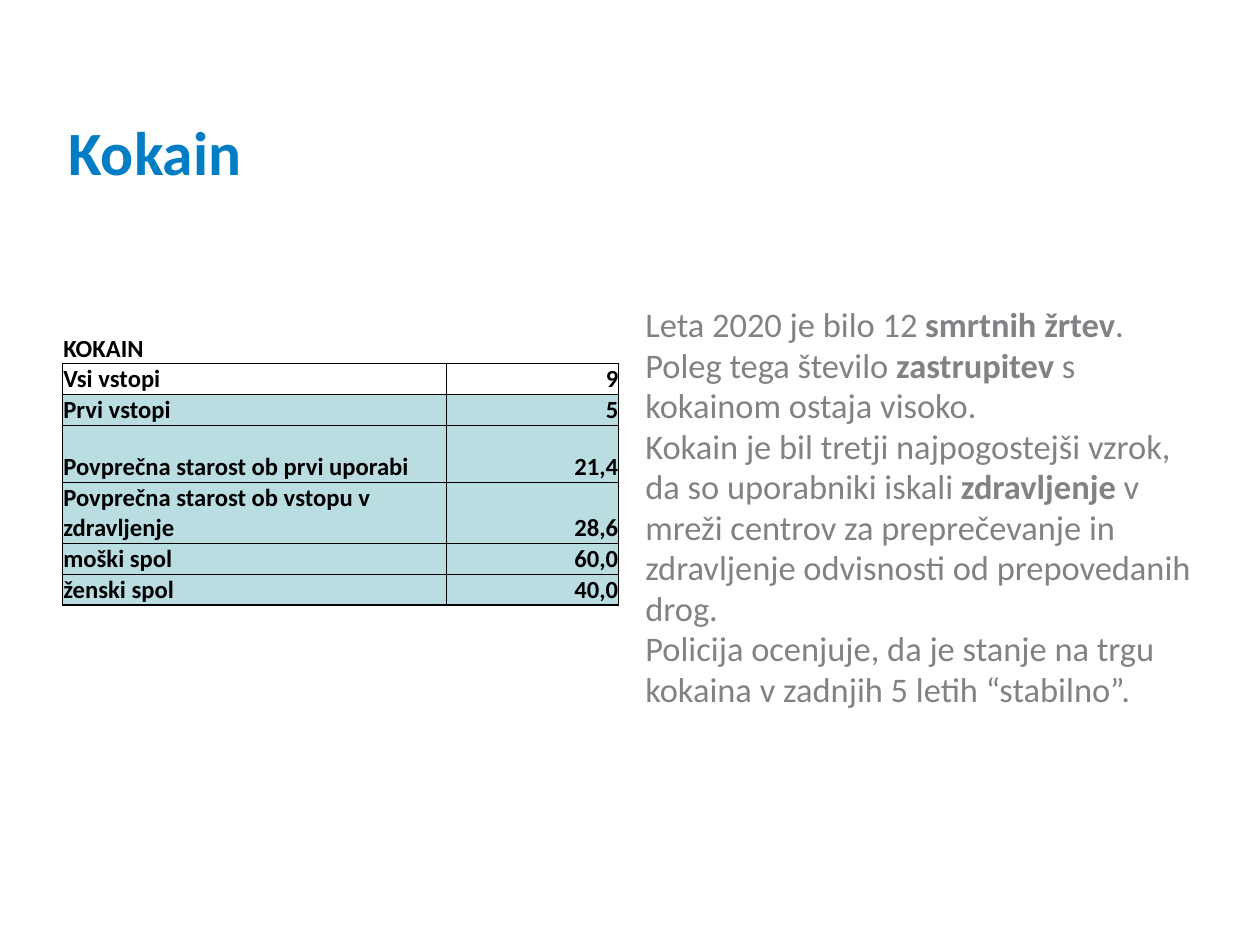
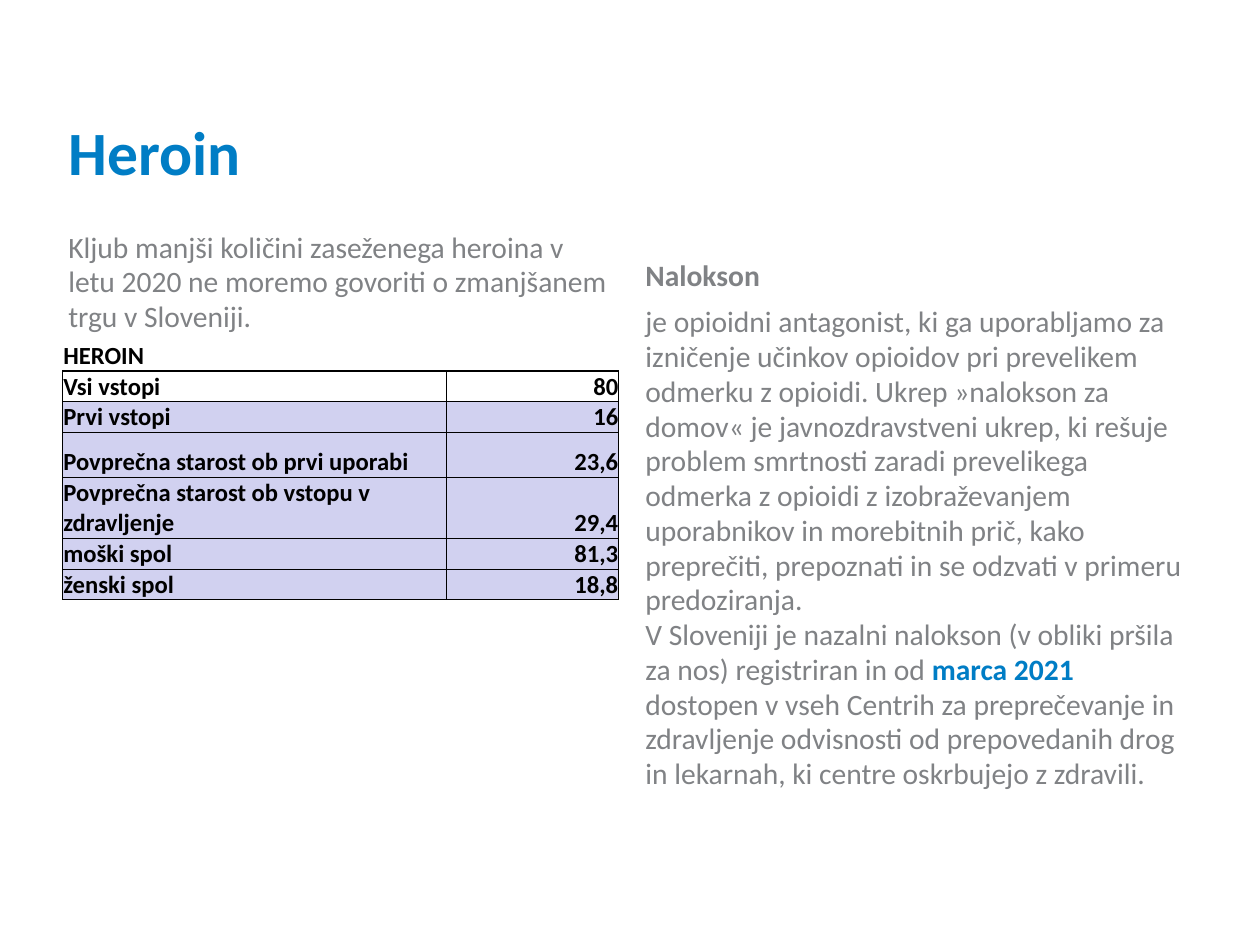
from lxml import etree
from pptx import Presentation
from pptx.dml.color import RGBColor
from pptx.enum.text import MSO_ANCHOR, MSO_AUTO_SIZE, PP_ALIGN
from pptx.oxml.ns import qn
from pptx.util import Pt

BOTTOM, TOP = MSO_ANCHOR.BOTTOM, MSO_ANCHOR.TOP
LEFT, RIGHT = PP_ALIGN.LEFT, PP_ALIGN.RIGHT
NO_AUTOFIT = MSO_AUTO_SIZE.NONE

FONT = "Calibri"
BLUE, GRAY, BLACK = "007DC5", "808285", "000000"
TEAL, LILAC = "BADDE1", "D1D1F0"
INSET = 4.5
LINE_SPACING = 0.98

# Left, top, width, height in points
TITLE_BOX = (51, 31, 922, 128)
INTRO_BOX = (51, 172, 452, 104.4)
HEADING_BOX = (520, 172, 453, 71.4)
TEXT_BOX = (520, 243.4, 453, 443)
TABLE_LEFT, COLUMN_WIDTHS = 51, (312, 140)
ROW_HEIGHT, TWO_LINE_HEIGHT = 25, 50

ROW_LABELS = (
    "Vsi vstopi",
    "Prvi vstopi",
    "Povprečna starost ob prvi uporabi",
    "Povprečna starost ob vstopu v zdravljenje",
    "moški spol",
    "ženski spol",
)

# A paragraph is a list of runs: (text, bold, colour)
SLIDES = [
    {
        "layout": "Title and Content",
        "title": "Kokain",
        "texts": {
            1: (TEXT_BOX, TOP, 28, [
                [("Leta 2020 je bilo 12 ", False, GRAY),
                 ("smrtnih žrtev", True, GRAY),
                 (".", False, GRAY)],
                [("Poleg tega število ", False, GRAY),
                 ("zastrupitev", True, GRAY),
                 (" s kokainom ostaja visoko.", False, GRAY)],
                [("Kokain je bil tretji najpogostejši vzrok, da so uporabniki "
                  "iskali ", False, GRAY),
                 ("zdravljenje", True, GRAY),
                 (" v mreži centrov za preprečevanje in zdravljenje odvisnosti "
                  "od prepovedanih drog.", False, GRAY)],
                [("Policija ocenjuje, da je stanje na trgu kokaina v zadnjih "
                  "5 letih “stabilno”.", False, GRAY)],
            ]),
        },
        "table": {"heading": "KOKAIN", "top": 270.7, "first_use_height": 46, "fill": TEAL,
                  "values": ("9", "5", "21,4", "28,6", "60,0", "40,0")},
    },
    {
        "layout": "Comparison",
        "title": "Heroin",
        "texts": {
            1: (INTRO_BOX, BOTTOM, 24, [
                [("Kljub manjši količini zaseženega heroina v letu 2020 ne moremo "
                  "govoriti o zmanjšanem trgu v Sloveniji.", False, GRAY)],
            ]),
            3: (HEADING_BOX, BOTTOM, 24, [[("Nalokson", True, GRAY)]]),
            4: (TEXT_BOX, TOP, 24, [
                [("je opioidni antagonist, ki ga uporabljamo za izničenje učinkov "
                  "opioidov pri prevelikem odmerku z opioidi. Ukrep »nalokson za "
                  "domov« je javnozdravstveni ukrep, ki rešuje problem smrtnosti "
                  "zaradi prevelikega odmerka z opioidi z izobraževanjem uporabnikov "
                  "in morebitnih prič, kako preprečiti, prepoznati in se odzvati v "
                  "primeru predoziranja.", False, GRAY)],
                [("V Sloveniji je nazalni nalokson (v obliki pršila za nos) "
                  "registriran in od ", False, GRAY),
                 ("marca 2021 ", True, BLUE),
                 ("dostopen v vseh Centrih za preprečevanje in zdravljenje odvisnosti "
                  "od prepovedanih drog in lekarnah, ki centre oskrbujejo z zdravili.",
                  False, GRAY)],
            ]),
        },
        "table": {"heading": "HEROIN", "top": 276.5, "first_use_height": 36, "fill": LILAC,
                  "values": ("80", "16", "23,6", "29,4", "81,3", "18,8")},
    },
]


def color(hex_string):
    return RGBColor.from_string(hex_string)


def add_span(para, text, size, bold, hex_color):
    span = para.add_run()
    span.text = text
    font = span.font
    font.name, font.size, font.bold = FONT, Pt(size), bold
    font.color.rgb = color(hex_color)


def fill_placeholder(box, bounds, anchor, size, paragraphs):
    box.left, box.top, box.width, box.height = map(Pt, bounds)
    frame = box.text_frame
    frame.word_wrap, frame.auto_size = True, NO_AUTOFIT
    frame.vertical_anchor = anchor
    frame.margin_left = frame.margin_right = Pt(INSET)
    frame.margin_top = frame.margin_bottom = Pt(INSET)
    for index, runs in enumerate(paragraphs):
        para = frame.add_paragraph() if index else frame.paragraphs[0]
        para.alignment = LEFT
        para.space_before = Pt(0)
        para.line_spacing = LINE_SPACING
        properties = para._p.get_or_add_pPr()
        properties.set("marL", "0")
        properties.set("indent", "0")
        etree.SubElement(properties, qn("a:buNone"))
        for text, bold, hex_color in runs:
            add_span(para, text, size, bold, hex_color)


def set_borders(cell, widths):
    """Draw left, right, top and bottom borders; width 0 hides one."""
    properties = cell._tc.get_or_add_tcPr()
    for index, (side, width) in enumerate(zip("LRTB", widths)):
        line = etree.Element(qn(f"a:ln{side}"), w=str(int(Pt(width))))
        if width:
            fill = etree.SubElement(line, qn("a:solidFill"))
            etree.SubElement(fill, qn("a:srgbClr"), val=BLACK)
        else:
            etree.SubElement(line, qn("a:noFill"))
        properties.insert(index, line)


def border_widths(row, column, last_row):
    if row == 0:
        return 0, 0, 0, 1
    left, right = (1, 0.5) if column == 0 else (0.5, 1)
    return left, right, 1 if row <= 2 else 0.5, 1 if row in (1, last_row) else 0.5


def add_data_table(page, heading, top, first_use_height, fill, values):
    rows = [(heading, ""), *zip(ROW_LABELS, values)]
    heights = [ROW_HEIGHT] * 3 + [first_use_height, TWO_LINE_HEIGHT] + [ROW_HEIGHT] * 2
    table = page.shapes.add_table(
        len(rows), len(COLUMN_WIDTHS), Pt(TABLE_LEFT), Pt(top),
        Pt(sum(COLUMN_WIDTHS)), Pt(sum(heights))).table
    table.first_row = table.horz_banding = False
    for column, width in zip(table.columns, COLUMN_WIDTHS):
        column.width = Pt(width)
    for row, (texts, height) in enumerate(zip(rows, heights)):
        table.rows[row].height = Pt(height)
        for column, text in enumerate(texts):
            cell = table.cell(row, column)
            cell.margin_left = cell.margin_right = cell.margin_top = Pt(0.5)
            cell.margin_bottom = Pt(0)
            cell.vertical_anchor = BOTTOM
            if row >= 2:
                cell.fill.solid()
                cell.fill.fore_color.rgb = color(fill)
            else:
                cell.fill.background()
            set_borders(cell, border_widths(row, column, len(rows) - 1))
            para = cell.text_frame.paragraphs[0]
            para.alignment = RIGHT if column else LEFT
            if text:
                add_span(para, text, 20, True, BLACK)


def add_page(deck, content):
    page = deck.slides.add_slide(deck.slide_layouts.get_by_name(content["layout"]))
    fill_placeholder(page.shapes.title, TITLE_BOX, BOTTOM, 50,
                     [[(content["title"], True, BLUE)]])
    for box in list(page.placeholders):
        index = box.placeholder_format.idx
        if index in content["texts"]:
            fill_placeholder(box, *content["texts"][index])
        elif index:
            box._element.getparent().remove(box._element)
    add_data_table(page, **content["table"])


def main():
    deck = Presentation()
    deck.slide_width, deck.slide_height = Pt(1024), Pt(768)
    for content in SLIDES:
        add_page(deck, content)
    deck.save("out.pptx")


if __name__ == "__main__":
    main()
